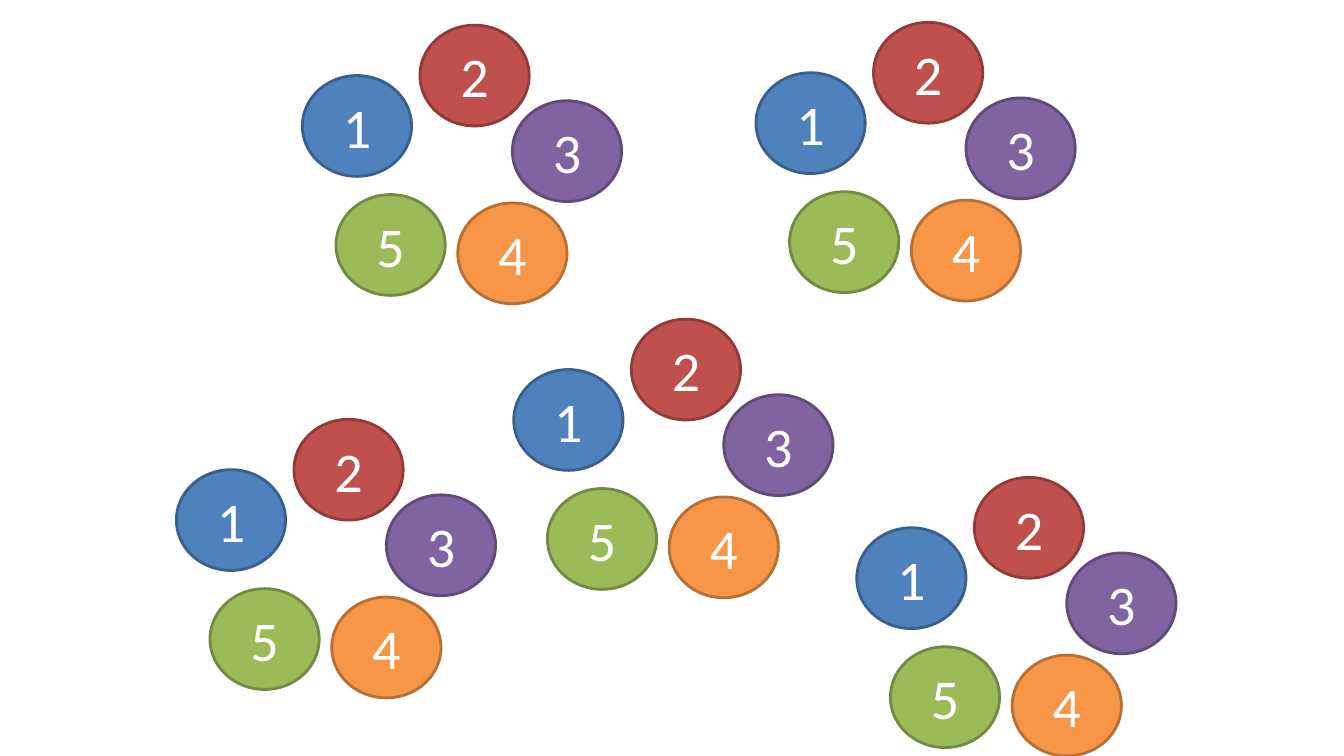
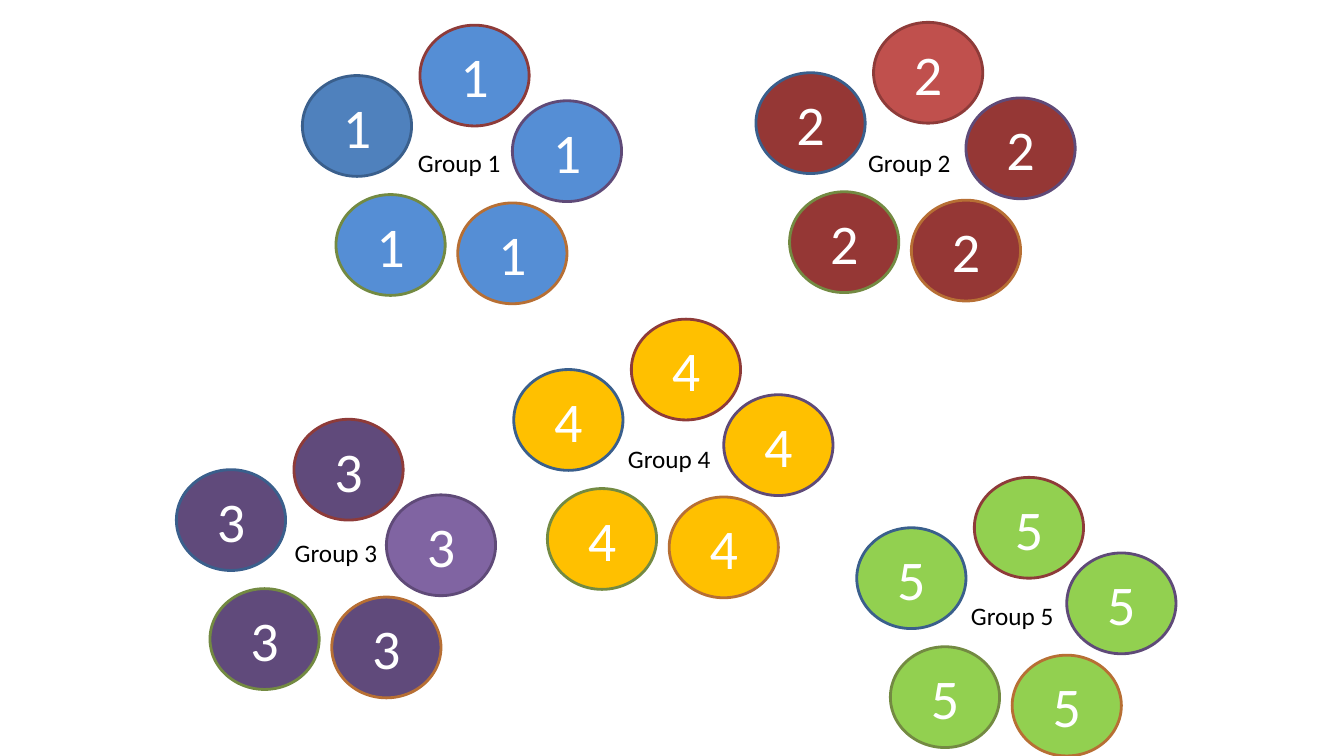
"""Build two slides that regroup five numbered circles from mixed teams into groups."""
from pptx import Presentation
from pptx import util as u
from pptx.dml.color import RGBColor
from pptx.enum import shapes, text

COLOURS = {
    "white": "FFFFFF", "black": "000000",
    "blue": "4F81BD", "blue edge": "3A5F8C",
    "red": "C0504D", "red edge": "8E3B39",
    "purple": "8064A2", "purple edge": "5F4A78",
    "orange": "F79646", "orange edge": "B76F34",
    "green": "9BBB59", "green edge": "738A42",
    "sky": "558ED5", "maroon": "953735", "plum": "604A7B",
    "gold": "FFC000", "lime": "92D050",
}
SEATS = [("blue", 0, 0), ("red", 84, -36), ("purple", 150, 18),
         ("orange", 111, 91), ("green", 24, 85)]
TEAMS = [(216, 54), (540, 52), (126, 335.5), (367, 264), (612, 377)]
GROUP_FILLS = ["sky", "maroon", "plum", "gold", "lime"]
LABELS = [(289, 101.5), (610.5, 101.5), (201, 380), (439, 313), (684, 425)]
KEEPS_SEAT_COLOUR = {1, 2, 3}


class Deck:
    """Hold the shared style and the current slide."""

    font = "Calibri"
    circle_size = (78, 72)
    label_size = (78, 29)
    number_points = 40
    label_points = 18

    def __init__(self):
        self.prs = Presentation()
        self.prs.slide_width, self.prs.slide_height = u.Pt(960), u.Pt(540)
        self.slide = None

    def colour(self, name):
        return RGBColor.from_string(COLOURS[name])

    def add_slide(self):
        self.slide = self.prs.slides.add_slide(self.prs.slide_layouts[6])

    def set_text(self, frame, words, points, colour, frame_format):
        for attribute, value in frame_format.items():
            setattr(frame, attribute, value)
        paragraph = frame.paragraphs[0]
        paragraph.alignment = text.PP_ALIGN.CENTER
        run = paragraph.add_run()
        run.text = words
        for attribute, value in {"name": self.font, "size": u.Pt(points)}.items():
            setattr(run.font, attribute, value)
        run.font.color.rgb = self.colour(colour)

    def circle(self, left, top, number, fill, edge):
        width, height = self.circle_size
        circle = self.slide.shapes.add_shape(
            shapes.MSO_SHAPE.OVAL, u.Pt(left), u.Pt(top), u.Pt(width), u.Pt(height))
        circle.shadow.inherit = False
        circle.fill.solid()
        circle.fill.fore_color.rgb = self.colour(fill)
        circle.line.color.rgb = self.colour(edge)
        circle.line.width = u.Pt(2)
        self.set_text(circle.text_frame, str(number), self.number_points, "white", {
            "margin_left": 0, "margin_right": 0, "margin_top": 0, "margin_bottom": 0,
            "vertical_anchor": text.MSO_ANCHOR.MIDDLE, "word_wrap": True})

    def label(self, left, top, words):
        width, height = self.label_size
        label = self.slide.shapes.add_textbox(
            u.Pt(left), u.Pt(top), u.Pt(width), u.Pt(height))
        self.set_text(label.text_frame, words, self.label_points, "black", {
            "word_wrap": True, "auto_size": text.MSO_AUTO_SIZE.SHAPE_TO_FIT_TEXT})

    def team(self, origin, group=None):
        left, top = origin
        for seat, (colour, dx, dy) in enumerate(SEATS, 1):
            fill = colour
            if group and not (seat == group and group in KEEPS_SEAT_COLOUR):
                fill = GROUP_FILLS[group - 1]
            self.circle(left + dx, top + dy, group or seat, fill, f"{colour} edge")


def main():
    deck = Deck()
    deck.add_slide()
    for origin in TEAMS:
        deck.team(origin)

    deck.add_slide()
    for group, origin in enumerate(TEAMS, 1):
        deck.team(origin, group)
    for group, (left, top) in enumerate(LABELS, 1):
        deck.label(left, top, f"Group {group}")

    deck.prs.save("out.pptx")


if __name__ == "__main__":
    main()
